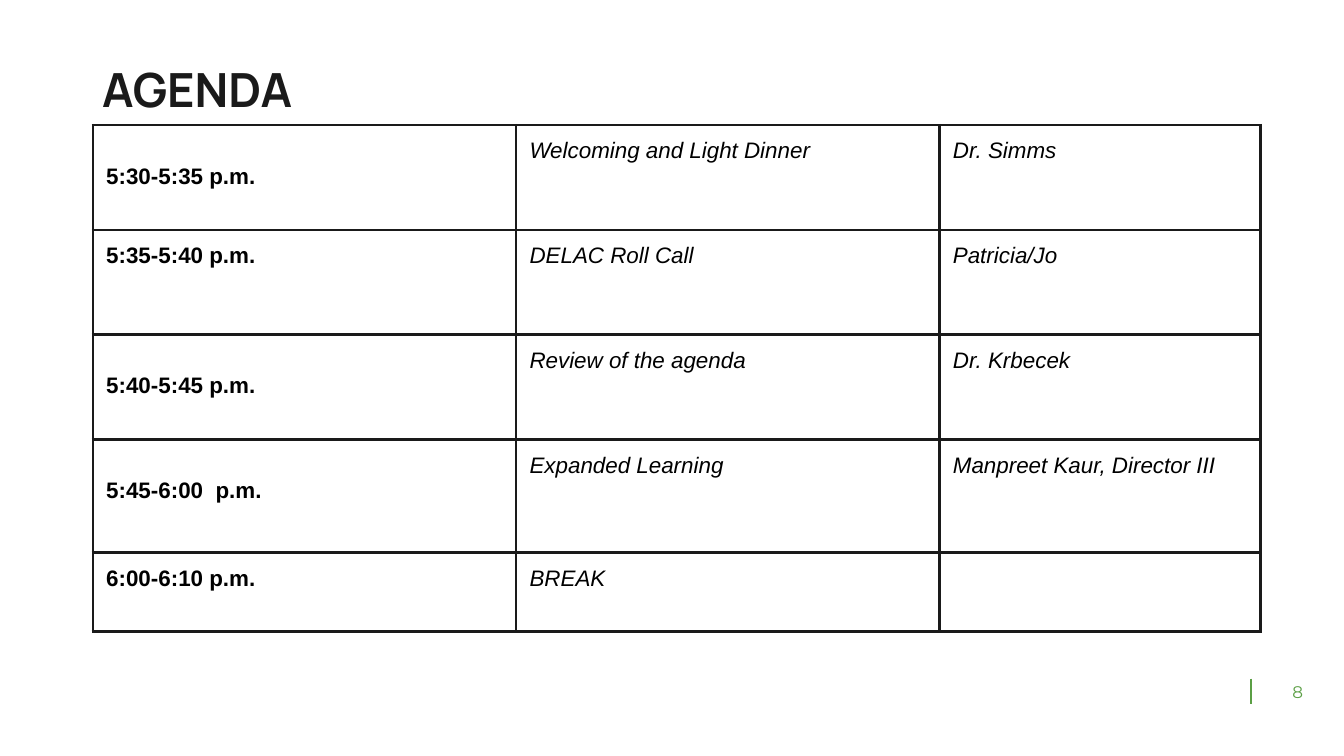
import pptx
import pptx.dml.color
import pptx.enum.shapes
import pptx.enum.text
import pptx.oxml
import pptx.oxml.ns
import pptx.util
from pptx.util import Inches

# Content
TITLE = "AGENDA"
PAGE_NUMBER = "8"
# row height, top margin of the time cell, time, topic, speaker
AGENDA = [
    (0.78, 0.29, "5:30-5:35 p.m.", "Welcoming and Light Dinner", "Dr. Simms"),
    (0.78, 0.1, "5:35-5:40 p.m.", "DELAC Roll Call", "Patricia/Jo"),
    (0.78, 0.29, "5:40-5:45 p.m.", "Review of the agenda", "Dr. Krbecek"),
    (0.84, 0.29, "5:45-6:00  p.m.", "Expanded Learning", "Manpreet Kaur, Director III"),
    (0.59, 0.1, "6:00-6:10 p.m.", "BREAK", ""),
]
COLUMN_WIDTHS = [3.15, 3.15, 2.39]
CELL_MARGIN = 0.1
COLORS = {"ink": "1A1A1A", "text": "000000", "accent": "5B9F45"}


def rgb(name):
    return pptx.dml.color.RGBColor.from_string(COLORS[name])


def style(para, font_name, size, color, bold=False, italic=False):
    font = para.font
    font.name, font.size = font_name, pptx.util.Pt(size)
    font.bold, font.italic = bold, italic
    font.color.rgb = rgb(color)


def set_margins(frame, side, end):
    frame.margin_left = frame.margin_right = Inches(side)
    frame.margin_top = frame.margin_bottom = Inches(end)


def add_borders(cell):
    properties = cell._tc.get_or_add_tcPr()
    for index, edge in enumerate(("lnL", "lnR", "lnT", "lnB")):
        properties.insert(index, pptx.oxml.parse_xml(
            f'<a:{edge} {pptx.oxml.ns.nsdecls("a")} w="{pptx.util.Pt(1.5)}">'
            f'<a:solidFill><a:srgbClr val="{COLORS["ink"]}"/></a:solidFill></a:{edge}>'))


# Widescreen page, 16:9
deck = pptx.Presentation()
deck.slide_width, deck.slide_height = Inches(10), Inches(10 * 9 / 16)
page = deck.slides.add_slide(deck.slide_layouts[5])

# Page number with its divider
divider = page.shapes.add_connector(
    pptx.enum.shapes.MSO_CONNECTOR.STRAIGHT,
    Inches(9.31), Inches(5.05), Inches(9.31), Inches(5.24))
divider.line.color.rgb = rgb("accent")
divider.line.width = pptx.util.Pt(1)
divider._element.spPr.append(
    pptx.oxml.parse_xml(f'<a:effectLst {pptx.oxml.ns.nsdecls("a")}/>'))

number = page.shapes.add_textbox(Inches(9.31), Inches(5.03), Inches(0.69), Inches(0.23)).text_frame
number.word_wrap = True
number.vertical_anchor = pptx.enum.text.MSO_ANCHOR.MIDDLE
set_margins(number, 0.07, 0.04)
number.text = PAGE_NUMBER
number.paragraphs[0].alignment = pptx.enum.text.PP_ALIGN.CENTER
style(number.paragraphs[0], "Montserrat", 9, "accent")

# Title
title = page.shapes.title
title.left, title.top, title.width, title.height = map(Inches, (0.69, 0.46, 8.62, 0.47))
heading = title.text_frame
heading.text = TITLE
heading.auto_size = pptx.enum.text.MSO_AUTO_SIZE.NONE
heading.vertical_anchor = pptx.enum.text.MSO_ANCHOR.TOP
set_margins(heading, 0.07, 0.04)
heading.paragraphs[0].alignment = pptx.enum.text.PP_ALIGN.LEFT
heading.paragraphs[0].line_spacing = 0.9
style(heading.paragraphs[0], "Manrope", 25.2, "ink", bold=True)

# Agenda table
table = page.shapes.add_table(
    len(AGENDA), len(COLUMN_WIDTHS), Inches(0.69), Inches(0.93),
    Inches(sum(COLUMN_WIDTHS)), Inches(sum(row[0] for row in AGENDA))).table
table.first_row = table.horz_banding = False
for column, width in zip(table.columns, COLUMN_WIDTHS):
    column.width = Inches(width)

for row, (height, time_margin, *texts) in zip(table.rows, AGENDA):
    row.height = Inches(height)
    for index, (cell, text) in enumerate(zip(row.cells, texts)):
        is_time = index == 0
        cell.text = text
        set_margins(cell, CELL_MARGIN, CELL_MARGIN)
        if is_time:
            cell.margin_top = Inches(time_margin)
        cell.fill.background()
        add_borders(cell)
        style(cell.text_frame.paragraphs[0], "Arial", 12, "text", bold=is_time, italic=not is_time)

deck.save("out.pptx")
